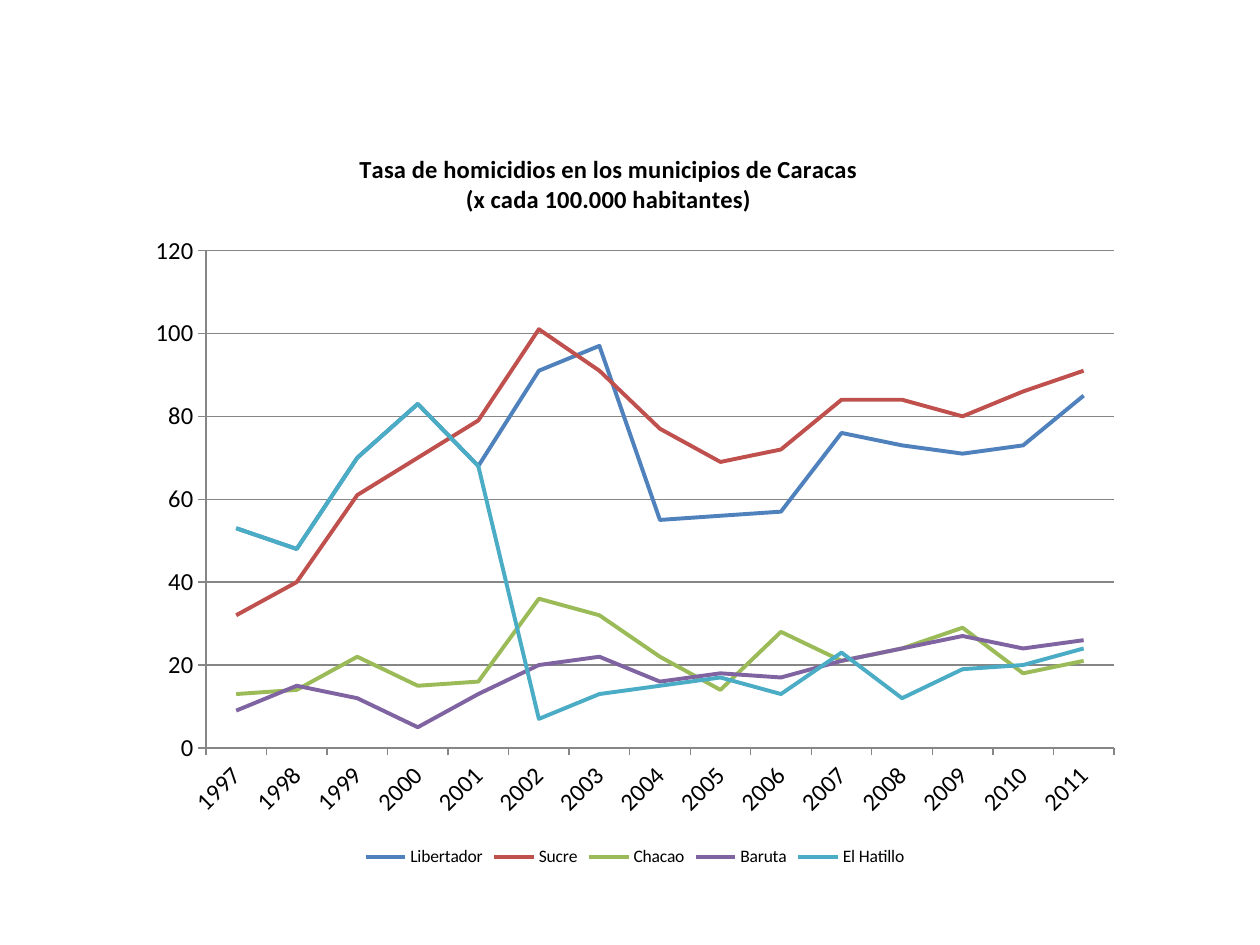
from lxml.etree import SubElement
from pptx import Presentation
from pptx.chart.data import CategoryChartData
from pptx.dml.color import RGBColor
from pptx.enum.chart import XL_CHART_TYPE as ChartType
from pptx.enum.chart import XL_LEGEND_POSITION as LegendPosition
from pptx.enum.chart import XL_TICK_MARK as TickMark
from pptx.oxml.ns import qn
from pptx.util import Pt

COLORS = {
    "Libertador": "4F81BD",
    "Sucre": "C0504D",
    "Chacao": "9BBB59",
    "Baruta": "8064A2",
    "El Hatillo": "4BACC6",
    "text": "000000",
    "grid": "868686",
}
YEARS = [str(year) for year in range(1997, 2012)]
RATES = {
    "Libertador": (53, 48, 70, 83, 68, 91, 97, 55, 56, 57, 76, 73, 71, 73, 85),
    "Sucre": (32, 40, 61, 70, 79, 101, 91, 77, 69, 72, 84, 84, 80, 86, 91),
    "Chacao": (13, 14, 22, 15, 16, 36, 32, 22, 14, 28, 21, 24, 29, 18, 21),
    "Baruta": (9, 15, 12, 5, 13, 20, 22, 16, 18, 17, 21, 24, 27, 24, 26),
    "El Hatillo": (53, 48, 70, 83, 68, 7, 13, 15, 17, 13, 23, 12, 19, 20, 24),
}
TITLE_LINES = ("Tasa de homicidios en los municipios de Caracas",
               "(x cada 100.000 habitantes)")


def style_font(font, size, bold=False):
    """Apply the chart's typeface and text colour at the given size."""
    font.name = "Calibri"
    font.size = Pt(size)
    font.bold = bold
    font.color.rgb = RGBColor.from_string(COLORS["text"])


def style_line(line, color, width):
    """Give a line a solid colour and a width in points."""
    line.color.rgb = RGBColor.from_string(color)
    line.width = Pt(width)


def set_layout(parent, index, **fractions):
    """Place a chart part by fractions of the chart's size."""
    for old_layout in parent.findall(qn("c:layout")):
        parent.remove(old_layout)
    layout = SubElement(parent, qn("c:layout"))
    parent.insert(index, layout)
    manual = SubElement(layout, qn("c:manualLayout"))
    settings = {"xMode": "edge", "yMode": "edge", **fractions}
    if "w" in fractions:
        settings = {"layoutTarget": "inner", **settings}
    for tag, value in settings.items():
        SubElement(manual, qn(f"c:{tag}")).set("val", str(value))


def add_title(chart):
    """Write the two-line bold title above the plot."""
    chart.has_title = True
    frame = chart.chart_title.text_frame
    for number, wording in enumerate(TITLE_LINES):
        paragraph = frame.add_paragraph() if number else frame.paragraphs[0]
        paragraph.text = wording
        style_font(paragraph.font, 14, bold=True)
    set_layout(chart.chart_title._element, 1, x=0.22, y=0.03)


def style_axes(chart):
    """Set the scale, ticks, labels and gridlines of both axes."""
    years, rates = chart.category_axis, chart.value_axis
    for axis in (years, rates):
        axis.major_tick_mark = TickMark.OUTSIDE
        axis.minor_tick_mark = TickMark.NONE
        style_font(axis.tick_labels.font, 14)
        style_line(axis.format.line, COLORS["grid"], 0.75)
    years._element.find(qn("c:txPr")).find(qn("a:bodyPr")).set("rot", "-2700000")
    rates.minimum_scale, rates.maximum_scale, rates.major_unit = 0, 120, 20
    rates.has_major_gridlines = True
    style_line(rates.major_gridlines.format.line, COLORS["grid"], 0.75)


def add_homicide_chart(slide, left, top, width, height):
    """Draw the homicide rates by municipality in the given box."""
    data = CategoryChartData(number_format="0")
    data.categories = YEARS
    for municipality, rates in RATES.items():
        data.add_series(municipality, rates)
    chart = slide.shapes.add_chart(
        ChartType.LINE, Pt(left), Pt(top), Pt(width), Pt(height), data).chart
    style_font(chart.font, 18)
    add_title(chart)
    style_axes(chart)
    plot = chart.plots[0]
    plot.vary_by_categories = False
    for series in plot.series:
        series.smooth = False
        style_line(series.format.line, COLORS[series.name], 2.25)
    set_layout(chart._chartSpace.chart.plotArea, 0, x=0.07, y=0.167, w=0.91, h=0.667)
    chart.has_legend = True
    chart.legend.position = LegendPosition.BOTTOM
    chart.legend.include_in_layout = False
    style_font(chart.legend.font, 10)


def main():
    """Build the slide and save it."""
    deck = Presentation()
    deck.slide_width, deck.slide_height = Pt(720), Pt(540)
    slide = deck.slides.add_slide(deck.slide_layouts[6])
    add_homicide_chart(slide, 77.76, 72, 570.24, 426.24)
    deck.save("out.pptx")


if __name__ == "__main__":
    main()
